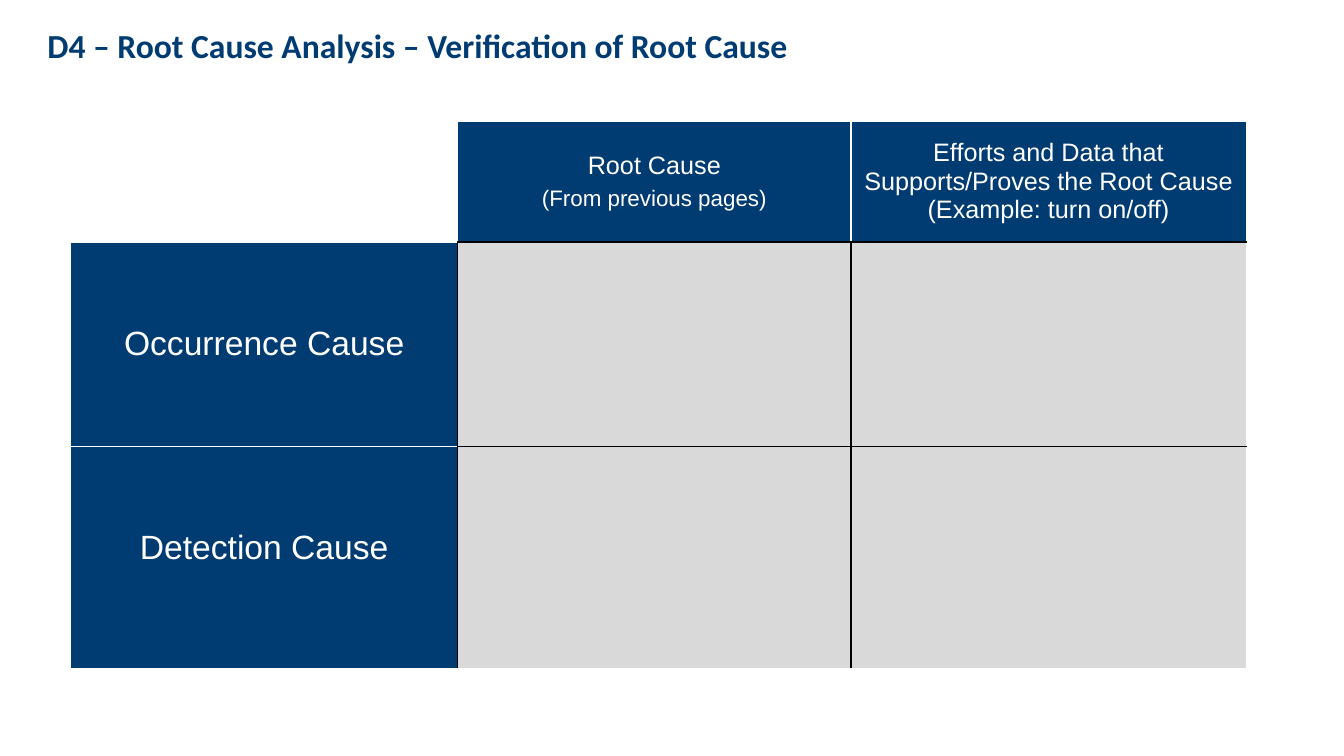
"""Build the root cause verification slide with its cause table."""
import pptx
import pptx.dml.color
import pptx.enum.text
import pptx.oxml.ns
import pptx.util
from lxml import etree

NAVY, GREY, WHITE, BLACK = "003B71", "D9D9D9", "FFFFFF", "000000"
COLUMN_WIDTHS = [3.84, 3.9, 3.92]
ROW_HEIGHTS = [1.2, 2.03, 2.2]
LABELS = {
    (0, 1): [("Root Cause", 18), ("(From previous pages)", 16)],
    (0, 2): [("Efforts and Data that Supports/Proves the Root Cause\v(Example: turn on/off)", 18)],
    (1, 0): [("Occurrence Cause", 24)],
    (2, 0): [("Detection Cause", 24)],
}
SIDES = {"lnL": (0, -1), "lnR": (0, 1), "lnT": (-1, 0), "lnB": (1, 0)}


def color(value):
    return pptx.dml.color.RGBColor.from_string(value)


def add_border(cell, side, value):
    qn = pptx.oxml.ns.qn
    line = etree.SubElement(cell._tc.get_or_add_tcPr(), qn("a:" + side), w="12700")
    fill = etree.SubElement(line, qn("a:solidFill"))
    etree.SubElement(fill, qn("a:srgbClr"), val=value)


deck = pptx.Presentation()
deck.slide_width = pptx.util.Inches(13.33)
deck.slide_height = pptx.util.Inches(7.5)
page = deck.slides.add_slide(deck.slide_layouts[5])

title = page.shapes.title
title.left, title.top, title.width, title.height = map(pptx.util.Inches, (0.37, 0.2, 11.24, 0.78))
title.text_frame.text = "D4 – Root Cause Analysis – Verification of Root Cause"
title.text_frame.vertical_anchor = pptx.enum.text.MSO_ANCHOR.TOP
heading = title.text_frame.paragraphs[0]
heading.alignment = pptx.enum.text.PP_ALIGN.LEFT
heading.font.name = "Calibri"
heading.font.size = pptx.util.Pt(24)
heading.font.bold = True
heading.font.color.rgb = color(NAVY)

frame = page.shapes.add_table(
    len(ROW_HEIGHTS), len(COLUMN_WIDTHS), pptx.util.Inches(0.7), pptx.util.Inches(1.2),
    pptx.util.Inches(sum(COLUMN_WIDTHS)), pptx.util.Inches(sum(ROW_HEIGHTS)))
table = frame.table
table.horz_banding = False
for column, width in zip(table.columns, COLUMN_WIDTHS):
    column.width = pptx.util.Inches(width)
for row, height in zip(table.rows, ROW_HEIGHTS):
    row.height = pptx.util.Inches(height)

for r in range(len(ROW_HEIGHTS)):
    for c in range(len(COLUMN_WIDTHS)):
        cell = table.cell(r, c)
        for side, (down, across) in SIDES.items():
            near_r, near_c = r + down, c + across
            inside = 0 <= near_r < len(ROW_HEIGHTS) and 0 <= near_c < len(COLUMN_WIDTHS)
            touches_grey = (r and c) or (near_r and near_c)
            add_border(cell, side, BLACK if inside and touches_grey else WHITE)

        if r == c == 0:
            cell.fill.background()
        else:
            cell.fill.solid()
            cell.fill.fore_color.rgb = color(GREY if r and c else NAVY)

        cell.vertical_anchor = pptx.enum.text.MSO_ANCHOR.MIDDLE
        for index, (text, size) in enumerate(LABELS.get((r, c), [])):
            para = cell.text_frame.add_paragraph() if index else cell.text_frame.paragraphs[0]
            para.text = text
            para.alignment = pptx.enum.text.PP_ALIGN.CENTER
            if index:
                para.space_before = pptx.util.Pt(4)
            for span in para.runs:
                span.font.name = "Arial"
                span.font.size = pptx.util.Pt(size)
                span.font.bold = False
                span.font.color.rgb = color(WHITE)

table.cell(2, 0).margin_bottom = pptx.util.Inches(0.25)

deck.save("out.pptx")
